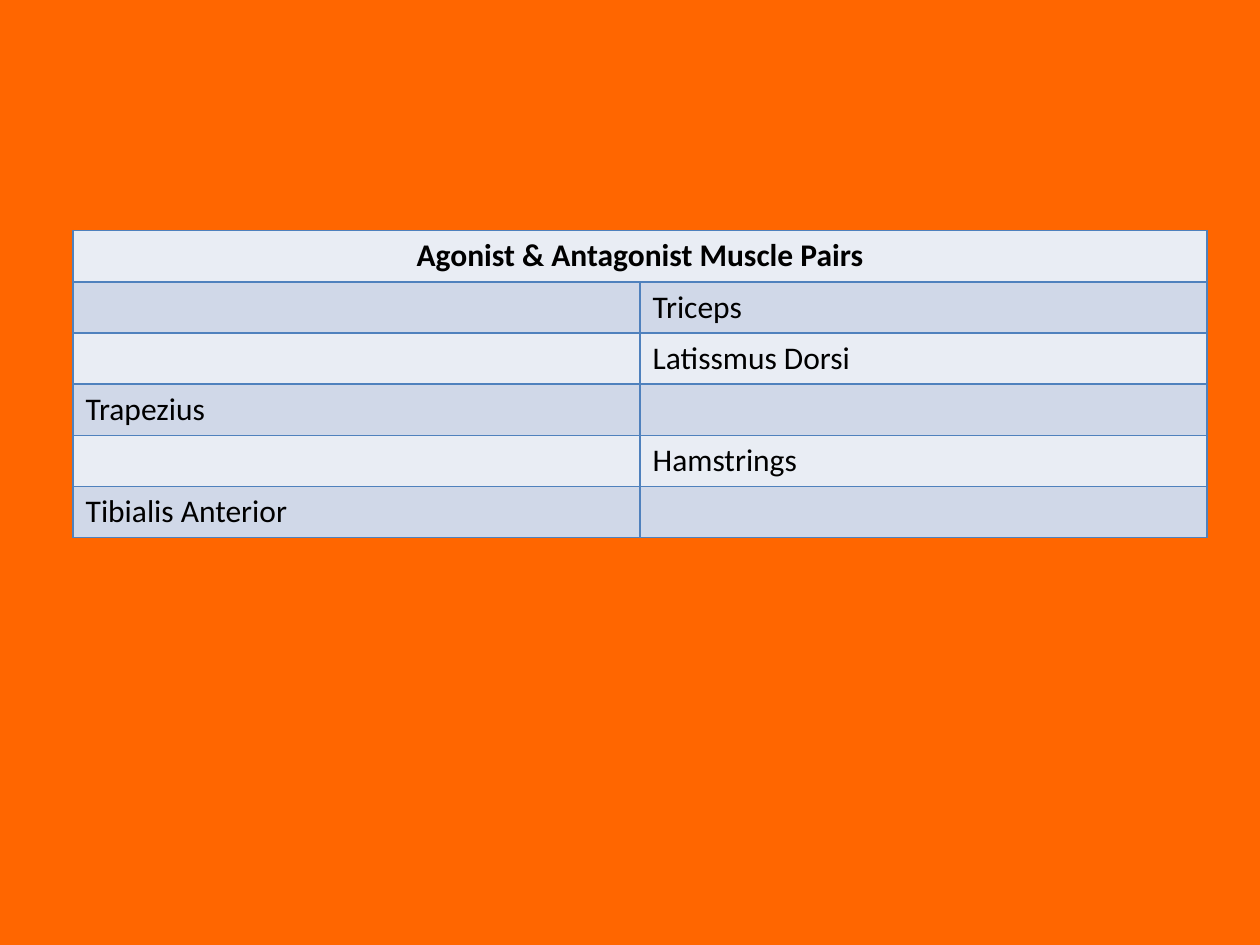
from dataclasses import dataclass
from lxml.etree import SubElement
from pptx import Presentation
from pptx.dml.color import RGBColor as RGB
from pptx.enum.text import PP_ALIGN
from pptx.oxml.ns import qn
from pptx.util import Inches, Pt

TITLE = "Agonist & Antagonist Muscle Pairs"
PAIRS = [
    ("", "Triceps"),
    ("", "Latissmus Dorsi"),
    ("Trapezius", ""),
    ("", "Hamstrings"),
    ("Tibialis Anterior", ""),
]


@dataclass(frozen=True)
class Theme:
    background: str = "FF6600"
    bands: tuple = ("E9EDF4", "D0D8E8")
    border: str = "4F81BD"
    text: str = "000000"
    font: str = "Calibri"
    size: int = 18
    border_width: int = 1


THEME = Theme()
LEFT, TOP, WIDTH, HEIGHT = 0.58, 1.83, 9, 2.44


def set_borders(cell):
    tc_pr = cell._tc.get_or_add_tcPr()
    for side in ("lnL", "lnR", "lnT", "lnB"):
        ln = SubElement(tc_pr, qn(f"a:{side}"), w=str(Pt(THEME.border_width)))
        fill = SubElement(ln, qn("a:solidFill"))
        SubElement(fill, qn("a:srgbClr"), val=THEME.border)


def style_cell(cell, text, row):
    set_borders(cell)
    cell.fill.solid()
    cell.fill.fore_color.rgb = RGB.from_string(THEME.bands[row % 2])
    if not text:
        return
    cell.text_frame.text = text
    p = cell.text_frame.paragraphs[0]
    p.alignment = PP_ALIGN.LEFT if row else PP_ALIGN.CENTER
    font = p.runs[0].font
    font.name, font.size, font.bold = THEME.font, Pt(THEME.size), row == 0
    font.color.rgb = RGB.from_string(THEME.text)


def main():
    prs = Presentation()
    prs.slide_width, prs.slide_height = Inches(10), Inches(7.5)
    slide = prs.slides.add_slide(prs.slide_layouts[6])
    slide.background.fill.solid()
    slide.background.fill.fore_color.rgb = RGB.from_string(THEME.background)

    rows = [(TITLE, ""), *PAIRS]
    table = slide.shapes.add_table(
        len(rows), 2, Inches(LEFT), Inches(TOP), Inches(WIDTH), Inches(HEIGHT)
    ).table
    table.cell(0, 0).merge(table.cell(0, 1))
    for r, row in enumerate(rows):
        for c, text in enumerate(row):
            style_cell(table.cell(r, c), text, r)
    prs.save("out.pptx")


if __name__ == "__main__":
    main()
